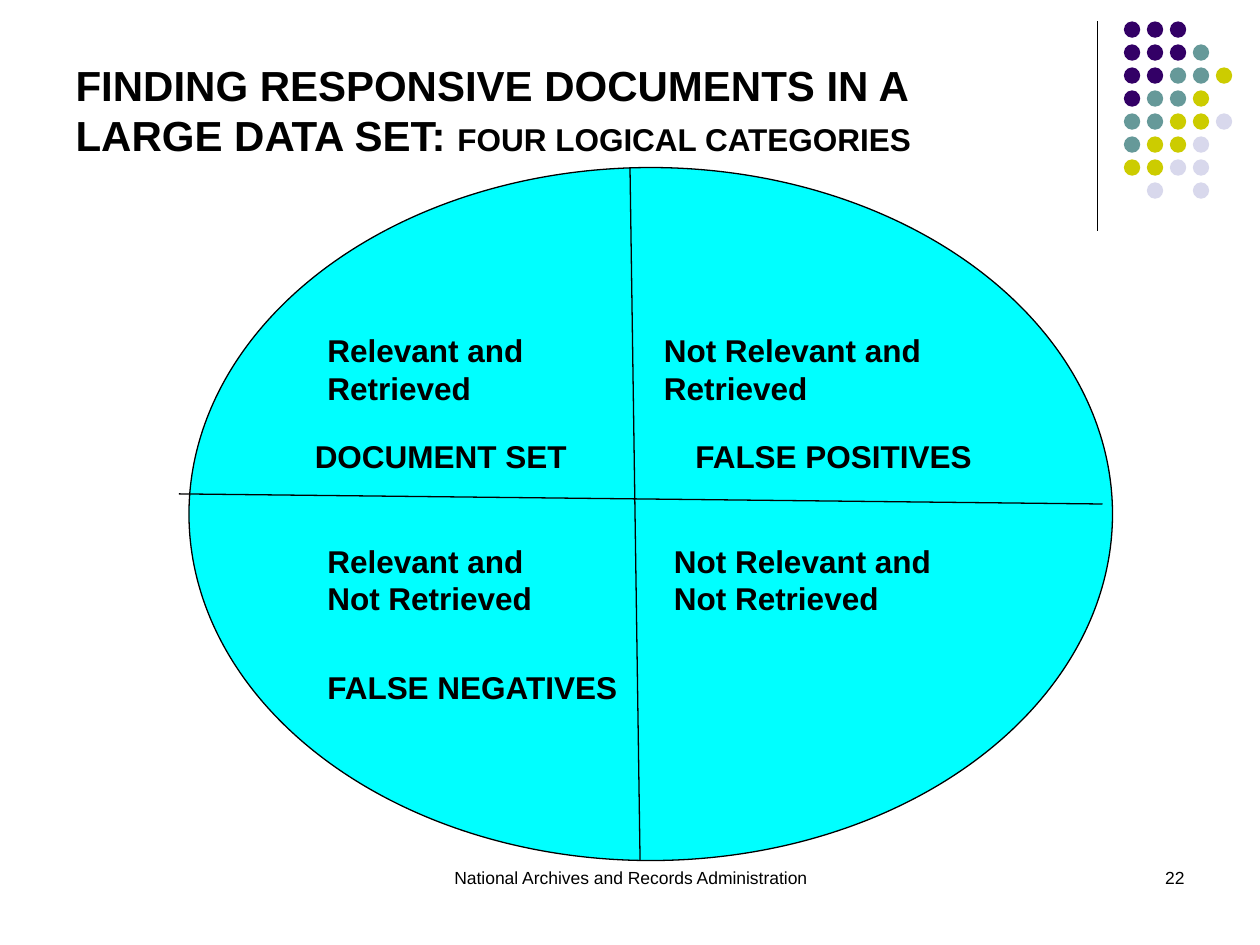
"""Build the slide on the four logical categories of document retrieval."""
from lxml import etree
from pptx import Presentation
from pptx.dml.color import RGBColor
from pptx.enum.shapes import MSO_CONNECTOR, MSO_SHAPE
from pptx.enum.text import MSO_ANCHOR, MSO_AUTO_SIZE, PP_ALIGN
from pptx.oxml.ns import qn
from pptx.util import Inches, Pt

STRAIGHT = MSO_CONNECTOR.STRAIGHT
OVAL = MSO_SHAPE.OVAL
TOP = MSO_ANCHOR.TOP
NO_FIT = MSO_AUTO_SIZE.NONE
LEFT, CENTER, RIGHT = PP_ALIGN.LEFT, PP_ALIGN.CENTER, PP_ALIGN.RIGHT
TITLE_ONLY = 5
FONT = "Arial"
COLORS = {
    "ink": "000000",
    "set": "00FFFF",
    "P": "330066",
    "T": "669999",
    "Y": "CCCC00",
    "L": "D8D8EC",
}
DOT_ROWS = ["PPP", "PPPT", "PPTTY", "PTTY", "TTYYL", "TYYL", "YYLL", " L L"]
DOT_PITCH = 0.73 / 4

LABELS = [
    ("Not Relevant and Retrieved", 5.17, 2.58, 2.25, 0.7),
    ("Relevant and Retrieved", 2.5, 2.58, 2.08, 0.7),
    ("Relevant and Not Retrieved", 2.5, 4.25, 2.17, 0.7),
    ("Not Relevant and Not Retrieved", 5.25, 4.25, 2.42, 0.7),
    ("DOCUMENT SET", 2.4, 3.42, 2.43, 0.4),
    ("FALSE POSITIVES", 5.42, 3.42, 2.58, 0.4),
    ("FALSE NEGATIVES", 2.5, 5.25, 2.67, 0.4),
]


class SlideBuilder:
    """Hold the style and the current slide, and add elements to it."""

    def __init__(self, slide):
        self.s = slide

    def color(self, key):
        return RGBColor.from_string(COLORS[key])

    def style_run(self, r, size, bold):
        r.font.name = FONT
        r.font.size = Pt(size)
        r.font.bold = bold
        r.font.color.rgb = self.color("ink")

    def style_frame(self, tf, align):
        tf.word_wrap = True
        tf.auto_size = NO_FIT
        tf.vertical_anchor = TOP
        tf.paragraphs[0].alignment = align

    def title(self, parts, x, y, w, h):
        sp = self.s.shapes.title
        sp.left, sp.top, sp.width, sp.height = map(Inches, (x, y, w, h))
        self.style_frame(sp.text_frame, LEFT)
        for text, size in parts:
            r = sp.text_frame.paragraphs[0].add_run()
            r.text = text
            self.style_run(r, size, True)

    def text(self, text, x, y, w, h, size=18, bold=True, align=LEFT):
        tf = self.s.shapes.add_textbox(*map(Inches, (x, y, w, h))).text_frame
        tf.text = text
        self.style_frame(tf, align)
        self.style_run(tf.paragraphs[0].runs[0], size, bold)

    def ellipse(self, x, y, w, h, fill, outlined=False):
        sp = self.s.shapes.add_shape(OVAL, *map(Inches, (x, y, w, h)))
        sp.shadow.inherit = False
        sp.fill.solid()
        sp.fill.fore_color.rgb = self.color(fill)
        if outlined:
            self.outline(sp.line)
        else:
            sp.line.fill.background()

    def outline(self, line):
        line.color.rgb = self.color("ink")
        line.width = Pt(0.75)

    def line(self, x1, y1, x2, y2):
        ends = map(Inches, (x1, y1, x2, y2))
        cxn = self.s.shapes.add_connector(STRAIGHT, *ends)
        self.outline(cxn.line)
        etree.SubElement(cxn._element.spPr, qn("a:effectLst"))

    def dots(self, x, y, size):
        for row, keys in enumerate(DOT_ROWS):
            for col, key in enumerate(keys):
                if key in COLORS:
                    self.ellipse(x + col * DOT_PITCH, y + row * DOT_PITCH,
                                 size, size, key)


def main():
    prs = Presentation()
    prs.slide_width, prs.slide_height = Inches(10), Inches(7.5)
    b = SlideBuilder(prs.slides.add_slide(prs.slide_layouts[TITLE_ONLY]))

    b.line(8.71, 0.17, 8.71, 1.83)
    b.dots(8.92, 0.17, 0.13)
    b.text("National Archives and Records Administration",
           3.42, 6.83, 3.17, 0.5, size=10, bold=False, align=CENTER)
    b.text("22", 7.17, 6.83, 2.33, 0.5, size=10, bold=False, align=RIGHT)

    b.ellipse(1.5, 1.33, 7.33, 5.5, "set", outlined=True)
    b.line(5, 1.33, 5.08, 6.83)
    b.line(1.42, 3.92, 8.75, 4)
    for label in LABELS:
        b.text(*label)

    b.title([("FINDING RESPONSIVE DOCUMENTS IN A LARGE DATA SET: ", 24),
             ("FOUR LOGICAL CATEGORIES", 18)], 0.5, 0.42, 7.58, 0.9)
    prs.save("out.pptx")


if __name__ == "__main__":
    main()
